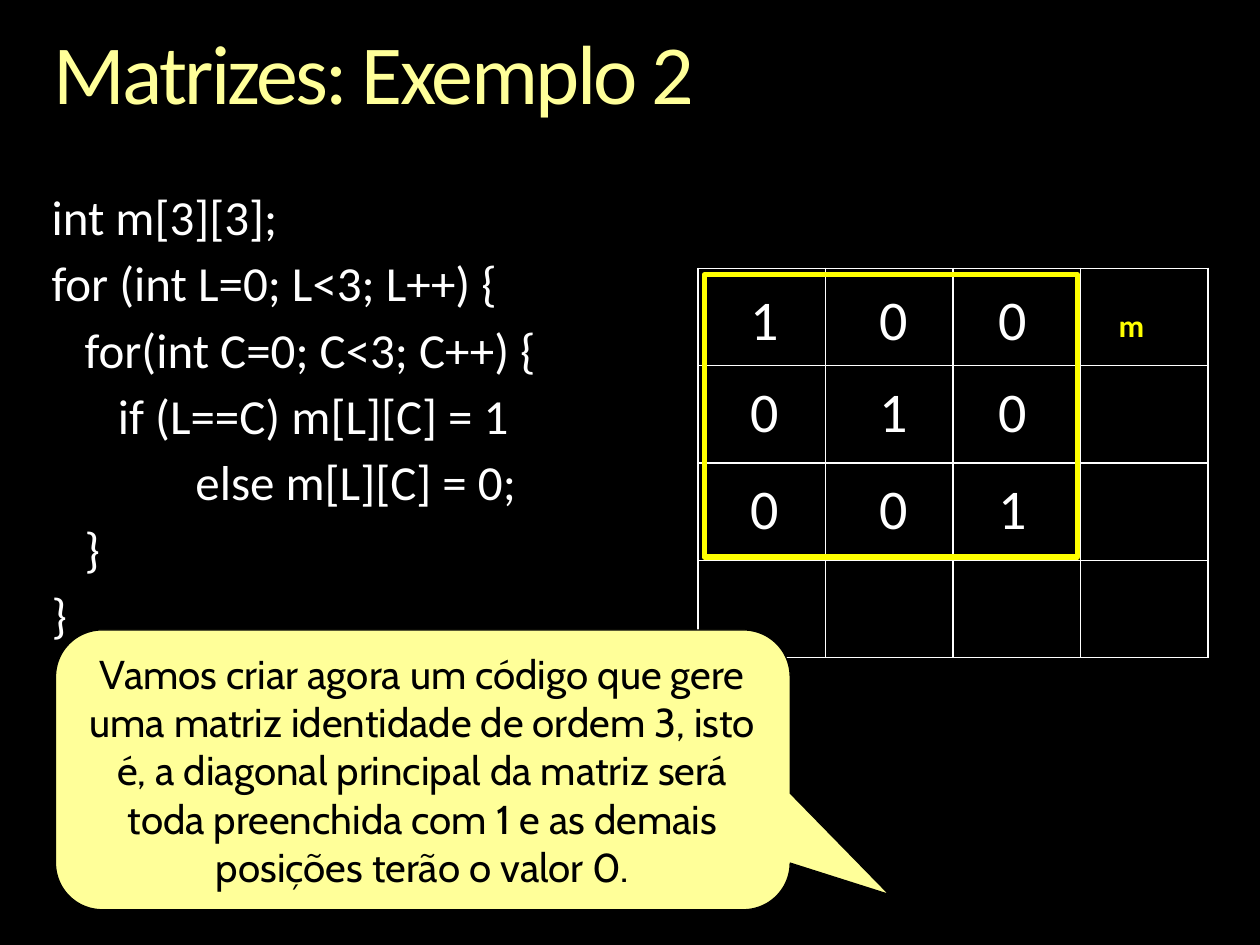
from dataclasses import dataclass

from lxml import etree
from pptx import Presentation
from pptx import util as u
from pptx.dml.color import RGBColor
from pptx.enum import shapes, text
from pptx.oxml.ns import qn


@dataclass(frozen=True)
class Theme:
    background: str = "000000"
    body: str = "FFFFFF"
    accent: str = "FFFF99"
    highlight: str = "FFFF00"
    dark: str = "000000"
    font: str = "Calibri"
    callout_font: str = "Cabin"
    title_size: int = 48
    matrix_size: int = 32
    code_size: int = 28
    callout_size: int = 23
    label_size: int = 18


TITLE = "Matrizes: Exemplo 2"
CODE = [
    "int m[3][3];",
    "for (int L=0; L<3; L++) {",
    "   for(int C=0; C<3; C++) {",
    "      if (L==C) m[L][C] = 1",
    "             else m[L][C] = 0;",
    "   }",
    "}",
]
MATRIX = ["1\t0\t0", "0\t1\t0", "0\t0\t1"]
MATRIX_GAPS = [0, 18, 21]
MATRIX_TABS = [2.6, 4.98]
CALLOUT = (
    "Vamos criar agora um código que gere uma matriz identidade de ordem 3, "
    "isto é, a diagonal principal da matriz será toda preenchida com 1 e as "
    "demais posições terão o valor 0."
)


def box(left, top, width, height):
    return [u.Cm(value) for value in (left, top, width, height)]


class SlideBuilder:
    def __init__(self, presentation, theme):
        self.theme = theme
        self.slide = presentation.slides.add_slide(presentation.slide_layouts[6])
        fill = self.slide.background.fill
        fill.solid()
        fill.fore_color.rgb = RGBColor.from_string(theme.background)

    def style(self, paragraph, size, color, font=None, bold=False):
        paragraph.font.size = u.Pt(size)
        paragraph.font.name = font or self.theme.font
        paragraph.font.bold = bold
        paragraph.font.color.rgb = RGBColor.from_string(color)

    def add_tabs(self, paragraph, stops):
        tab_list = etree.SubElement(paragraph._p.get_or_add_pPr(), qn("a:tabLst"))
        for stop in stops:
            etree.SubElement(tab_list, qn("a:tab"), pos=str(u.Cm(stop)), algn="l")

    def text_box(self, area, lines, size, color, gaps, tabs=()):
        """Add a box without margins; gaps holds the space before each line."""
        shape = self.slide.shapes.add_textbox(*box(*area))
        frame = shape.text_frame
        frame.word_wrap = True
        frame.auto_size = text.MSO_AUTO_SIZE.SHAPE_TO_FIT_TEXT
        frame.margin_left = frame.margin_right = 0
        frame.margin_top = frame.margin_bottom = 0
        for index, (line, gap) in enumerate(zip(lines, gaps)):
            paragraph = frame.paragraphs[0] if index == 0 else frame.add_paragraph()
            paragraph.add_run().text = line
            paragraph.line_spacing = 0.9
            if gap:
                paragraph.space_before = u.Pt(gap)
            if tabs:
                self.add_tabs(paragraph, tabs)
            self.style(paragraph, size, color)
        return shape

    def title(self, area, words):
        shape = self.text_box(area, [words], self.theme.title_size, self.theme.accent, [0])
        run = shape.text_frame.paragraphs[0].runs[0]
        run._r.get_or_add_rPr().set("spc", "-150")

    def code(self, area, lines):
        gaps = [0] + [7.7] * (len(lines) - 1)
        self.text_box(area, lines, self.theme.code_size, self.theme.body, gaps)

    def matrix(self, area, rows):
        self.text_box(area, rows, self.theme.matrix_size, self.theme.body,
                      MATRIX_GAPS, MATRIX_TABS)

    def border_cell(self, cell):
        properties = cell._tc.get_or_add_tcPr()
        for position, side in enumerate(("lnL", "lnR", "lnT", "lnB")):
            line = etree.Element(qn(f"a:{side}"), w=str(u.Pt(1)))
            fill = etree.SubElement(line, qn("a:solidFill"))
            etree.SubElement(fill, qn("a:srgbClr"), val=self.theme.body)
            properties.insert(position, line)

    def grid(self, area, rows, columns):
        table = self.slide.shapes.add_table(rows, columns, *box(*area)).table
        table.first_row = table.horz_banding = False
        for cell in table.iter_cells():
            cell.fill.background()
            self.border_cell(cell)

    def callout(self, area, words):
        shape = self.slide.shapes.add_shape(
            shapes.MSO_SHAPE.ROUNDED_RECTANGULAR_CALLOUT, *box(*area))
        for index, value in enumerate((0.635, 0.446, 0.167)):
            shape.adjustments[index] = value
        shape.shadow.inherit = False
        shape.fill.solid()
        shape.fill.fore_color.rgb = RGBColor.from_string(self.theme.accent)
        shape.line.color.rgb = RGBColor.from_string(self.theme.dark)
        shape.line.width = u.Pt(0.75)
        frame = shape.text_frame
        frame.word_wrap = True
        frame.vertical_anchor = text.MSO_ANCHOR.MIDDLE
        paragraph = frame.paragraphs[0]
        paragraph.text = words
        paragraph.alignment = text.PP_ALIGN.CENTER
        self.style(paragraph, self.theme.callout_size, self.theme.dark,
                   self.theme.callout_font)

    def labelled_frame(self, frame_area, label_area, name):
        label = self.slide.shapes.add_textbox(*box(*label_area))
        label.text_frame.word_wrap = True
        paragraph = label.text_frame.paragraphs[0]
        paragraph.text = name
        self.style(paragraph, self.theme.label_size, self.theme.highlight, bold=True)
        outline = self.slide.shapes.add_shape(shapes.MSO_SHAPE.RECTANGLE, *box(*frame_area))
        outline.shadow.inherit = False
        outline.fill.background()
        outline.line.color.rgb = RGBColor.from_string(self.theme.highlight)
        outline.line.width = u.Pt(3)
        self.slide.shapes.add_group_shape([label, outline])


def main():
    presentation = Presentation()
    presentation.slide_width = u.Cm(25.4)
    presentation.slide_height = u.Cm(19.05)
    builder = SlideBuilder(presentation, Theme())
    builder.code((1.04, 3.89, 12.45, 9.25), CODE)
    builder.title((1.07, 0.64, 23.29, 1.85), TITLE)
    builder.grid((14.07, 5.41, 10.28, 7.85), rows=4, columns=4)
    builder.callout((1.12, 12.7, 14.81, 5.64), CALLOUT)
    builder.matrix((15.14, 5.89, 6.32, 5.18), MATRIX)
    builder.labelled_frame((14.2, 5.54, 7.52, 5.69), (22.3, 6.05, 1.19, 1.02), "m")
    presentation.save("out.pptx")


if __name__ == "__main__":
    main()
